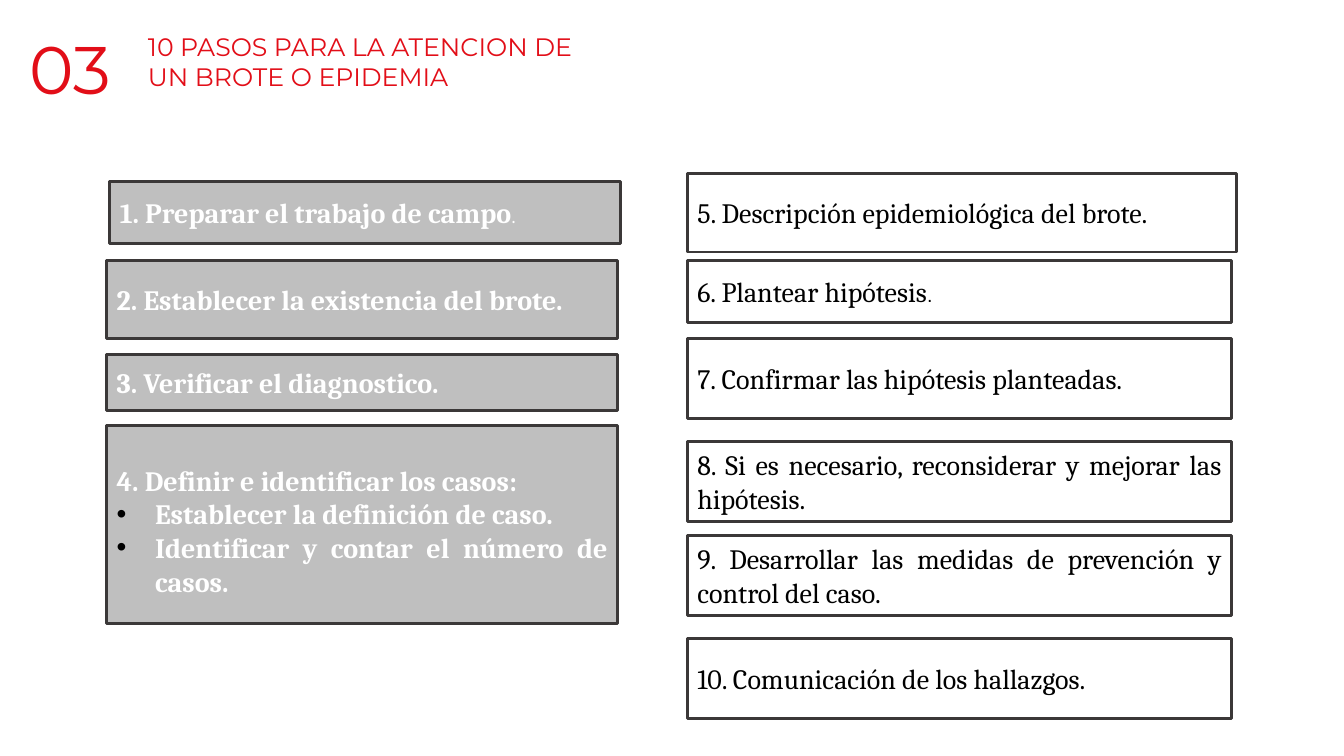
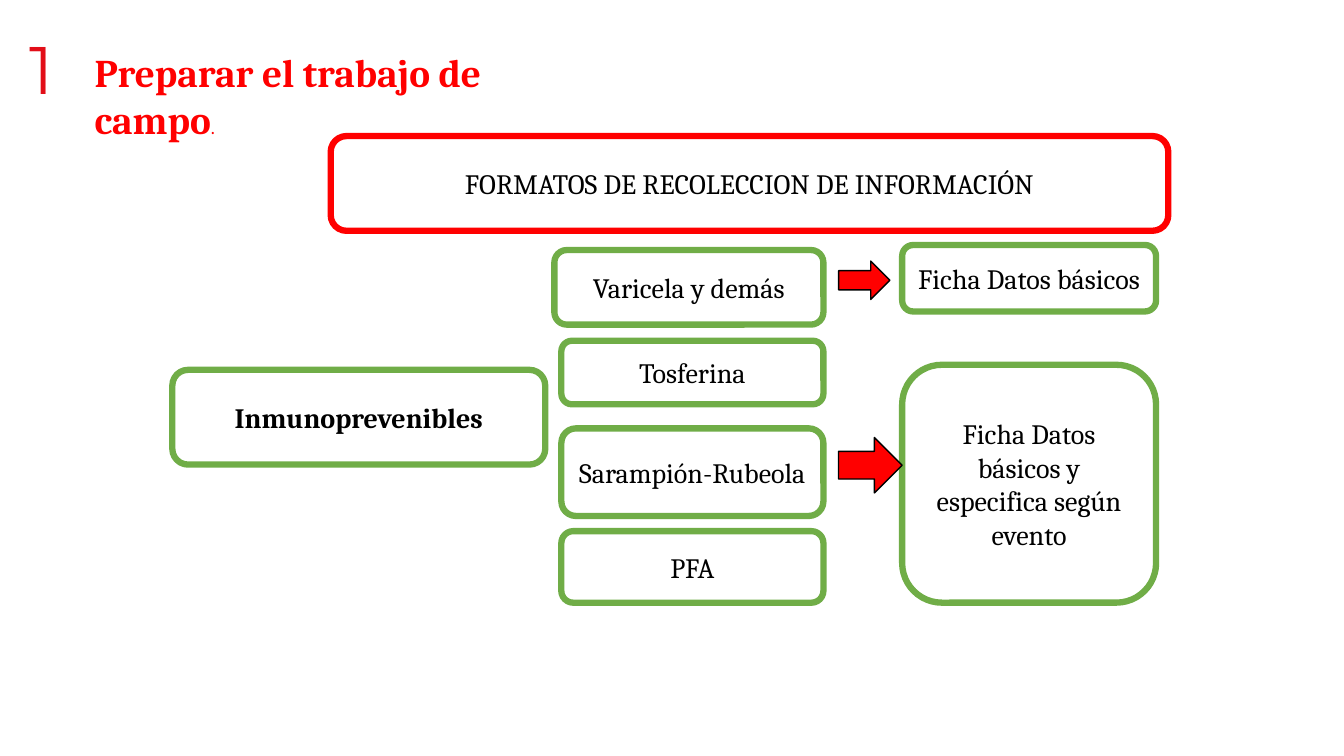
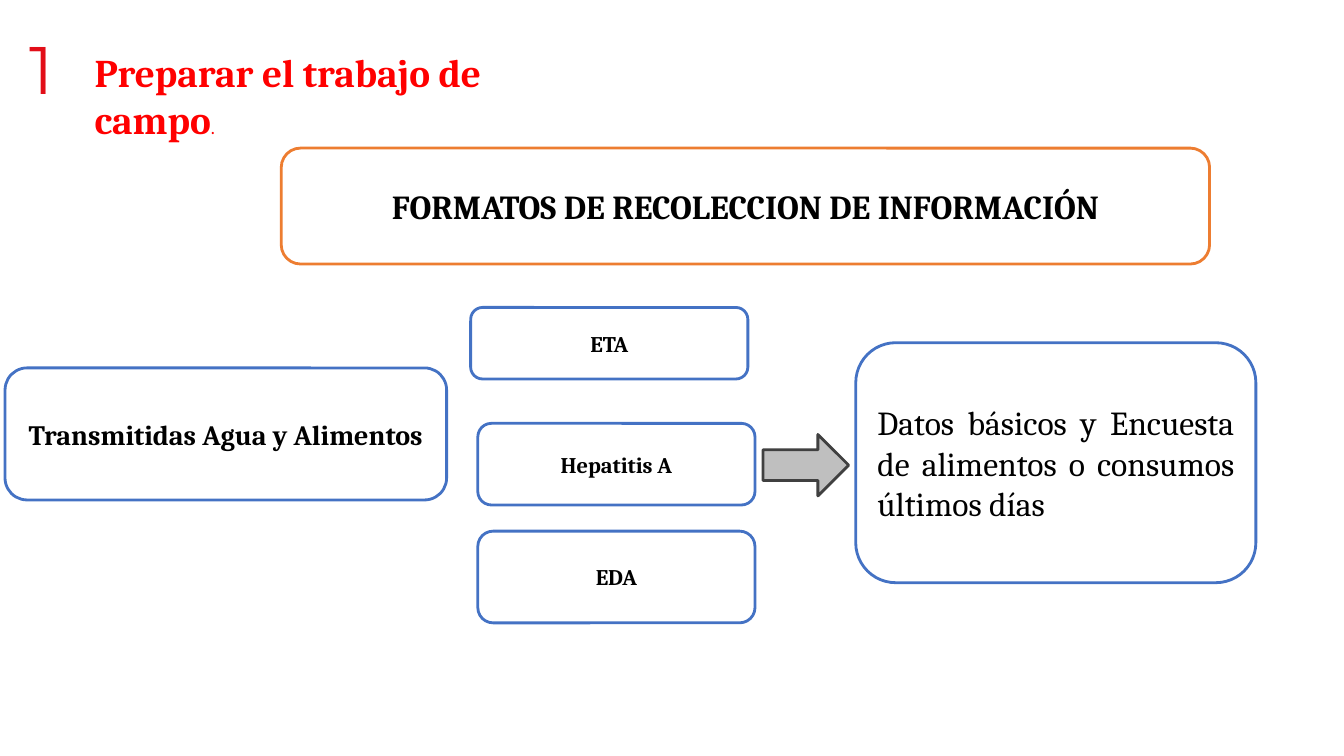
from lxml.etree import SubElement
from pptx import Presentation
from pptx.dml.color import RGBColor
from pptx.enum.shapes import MSO_SHAPE as SHAPE
from pptx.enum.text import MSO_ANCHOR as ANCHOR, PP_ALIGN as ALIGN
from pptx.oxml.ns import qn
from pptx.util import Pt

COLORS = {
    "brand": "E20E18", "red": "FF0000", "green": "70AD47", "orange": "ED7D31",
    "blue": "4472C4", "gray": "BFBFBF", "dark": "3B3838", "charcoal": "404040",
    "black": "000000", "white": "FFFFFF",
}
SERIF, SANS, DISPLAY = "Cambria", "Arial", "Montserrat"
BULLET_INDENT = 27.4


def rgb(name):
    return RGBColor.from_string(COLORS[name])


class Deck:
    def __init__(self):
        self.prs = Presentation()
        self.prs.slide_width, self.prs.slide_height = Pt(960), Pt(540)
        self.s = None

    def new_slide(self):
        self.s = self.prs.slides.add_slide(self.prs.slide_layouts[6])

    def run(self, p, text, size=20, color="black", bold=False, font=SERIF):
        r = p.add_run()
        r.text = text
        r.font.size, r.font.bold, r.font.name = Pt(size), bold, font
        r.font.color.rgb = rgb(color)

    def bullet(self, p):
        pPr = p._p.get_or_add_pPr()
        pPr.set("marL", str(Pt(BULLET_INDENT)))
        pPr.set("indent", str(-Pt(BULLET_INDENT)))
        SubElement(SubElement(pPr, qn("a:buClr")), qn("a:srgbClr"), val=COLORS["black"])
        SubElement(pPr, qn("a:buFont"), typeface=SANS)
        SubElement(pPr, qn("a:buChar"), char="•")

    def text(self, x, y, w, h, *runs, left=7.2):
        """Add a one-paragraph text box; each run is (text, style)."""
        tf = self.s.shapes.add_textbox(Pt(x), Pt(y), Pt(w), Pt(h)).text_frame
        tf.word_wrap = True
        tf.margin_left = Pt(left)
        for text, style in runs:
            self.run(tf.paragraphs[0], text, **style)

    def number(self, label, w):
        self.text(13.7, 15.8, w, 65.5,
                  (label, dict(size=48, color="brand", font=DISPLAY)))

    def step_title(self):
        self.number("1", 51.8)
        self.text(33.8, 30.6, 364.3, 78.5,
                  ("Preparar el trabajo de campo", dict(size=28, color="red", bold=True)),
                  (".", dict(size=14, color="red")), left=33.8)

    def shape(self, kind, x, y, w, h, fill, line, weight):
        sp = self.s.shapes.add_shape(kind, Pt(x), Pt(y), Pt(w), Pt(h))
        sp.shadow.inherit = False
        sp.fill.solid()
        sp.fill.fore_color.rgb = rgb(fill)
        sp.line.color.rgb = rgb(line)
        sp.line.width = Pt(weight)
        return sp

    def label(self, sp, text, align, **style):
        tf = sp.text_frame
        tf.word_wrap = True
        tf.vertical_anchor = ANCHOR.MIDDLE
        p = tf.paragraphs[0]
        p.alignment = align
        self.run(p, text, **style)
        return tf

    def step(self, x, y, w, h, text, done=False):
        """Add a list step; a done step is gray with bold white text."""
        fill, color = ("gray", "white") if done else ("white", "black")
        sp = self.shape(SHAPE.RECTANGLE, x, y, w, h, fill, "dark", 2)
        return self.label(sp, text, ALIGN.JUSTIFY, color=color, bold=done)

    def card(self, x, y, w, h, text, line, weight, align=ALIGN.CENTER, **style):
        sp = self.shape(SHAPE.ROUNDED_RECTANGLE, x, y, w, h, "white", line, weight)
        self.label(sp, text, align, **style)

    def arrow(self, x, y, w, h, fill, line, weight):
        self.shape(SHAPE.RIGHT_ARROW, x, y, w, h, fill, line, weight)


def steps_slide(d):
    d.new_slide()
    d.number("03", 116.6)
    d.text(98.6, 18.7, 343.4, 51.1,
           ("10 PASOS PARA LA ATENCION DE UN BROTE O EPIDEMIA",
            dict(size=18, color="brand", font=DISPLAY)))

    tf = d.step(78.5, 129.6, 365, 44.6, "1. Preparar el trabajo de campo", done=True)
    d.run(tf.paragraphs[0], ".", size=14, color="white")
    for y, h, text in ((185.8, 56.2, "2. Establecer la existencia del brote."),
                       (253.4, 39.6, "3. Verificar el diagnostico.")):
        d.step(76.3, y, 365, h, text, done=True)
    tf = d.step(76.3, 303.8, 365, 141.8, "4. Definir e identificar los casos:", done=True)
    tf.margin_top = Pt(12)
    for text in ("Establecer la definición de caso.",
                 "Identificar y contar el número de casos."):
        p = tf.add_paragraph()
        p.alignment = ALIGN.JUSTIFY
        d.bullet(p)
        d.run(p, text, color="white", bold=True)

    d.step(491, 123.8, 392.4, 56.2, "5. Descripción epidemiológica del brote.")
    tf = d.step(491, 185.8, 388.8, 44.6, "6. Plantear hipótesis")
    d.run(tf.paragraphs[0], ".", size=14, font=SANS)
    for y, text in (
            (241.9, "7. Confirmar las hipótesis planteadas."),
            (315.4, "8. Si es necesario, reconsiderar y mejorar las hipótesis."),
            (382.3, "9. Desarrollar las medidas de prevención y control del caso."),
            (455.8, "10. Comunicación de los hallazgos.")):
        d.step(491, y, 388.8, 57.2, text)


def vaccine_slide(d):
    d.new_slide()
    d.step_title()
    d.card(236.2, 97.2, 598.3, 67.7, "FORMATOS DE RECOLECCION DE INFORMACIÓN", "red", 4.5)
    d.card(123.1, 264.2, 266.4, 67.7, "Inmunoprevenibles", "green", 4.5, bold=True)
    for x, y, w, h, text in (
            (396, 178.6, 192.2, 53.3, "Varicela y demás"),
            (401, 243.4, 187.2, 45.4, "Tosferina"),
            (401, 306, 187.2, 62.6, "Sarampión-Rubeola"),
            (401, 379.4, 187.2, 51.1, "PFA"),
            (644.4, 175, 181.4, 47.5, "Ficha Datos básicos"),
            (644.4, 260.6, 181.4, 169.9, "Ficha Datos básicos y especifica según evento")):
        d.card(x, y, w, h, text, "green", 4.5)
    for y, w, h in ((186.5, 36.7, 27.4), (312.5, 45.4, 39.6)):
        d.arrow(599, y, w, h, "red", "black", 1)


def food_slide(d):
    d.new_slide()
    d.step_title()
    d.card(200.9, 105.8, 663.1, 82.8, "FORMATOS DE RECOLECCION DE INFORMACIÓN",
           "orange", 2, size=24, bold=True)
    d.card(3.6, 262.8, 315.4, 94.3, "Transmitidas Agua y Alimentos", "blue", 2, bold=True)
    for x, y, h, text in ((336.2, 219.6, 51.1, "ETA"),
                          (341.3, 302.4, 58.3, "Hepatitis A"),
                          (341.3, 379.4, 65.5, "EDA")):
        d.card(x, y, 198, h, text, "blue", 2, size=16, bold=True)
    d.card(611.3, 244.8, 285.8, 171.4,
           "Datos básicos y Encuesta de alimentos o consumos últimos días",
           "blue", 2, ALIGN.JUSTIFY, size=24)
    d.arrow(545, 310.3, 61.2, 43.9, "gray", "charcoal", 2)


def main():
    d = Deck()
    for build in (steps_slide, vaccine_slide, food_slide):
        build(d)
    d.prs.save("out.pptx")


if __name__ == "__main__":
    main()
